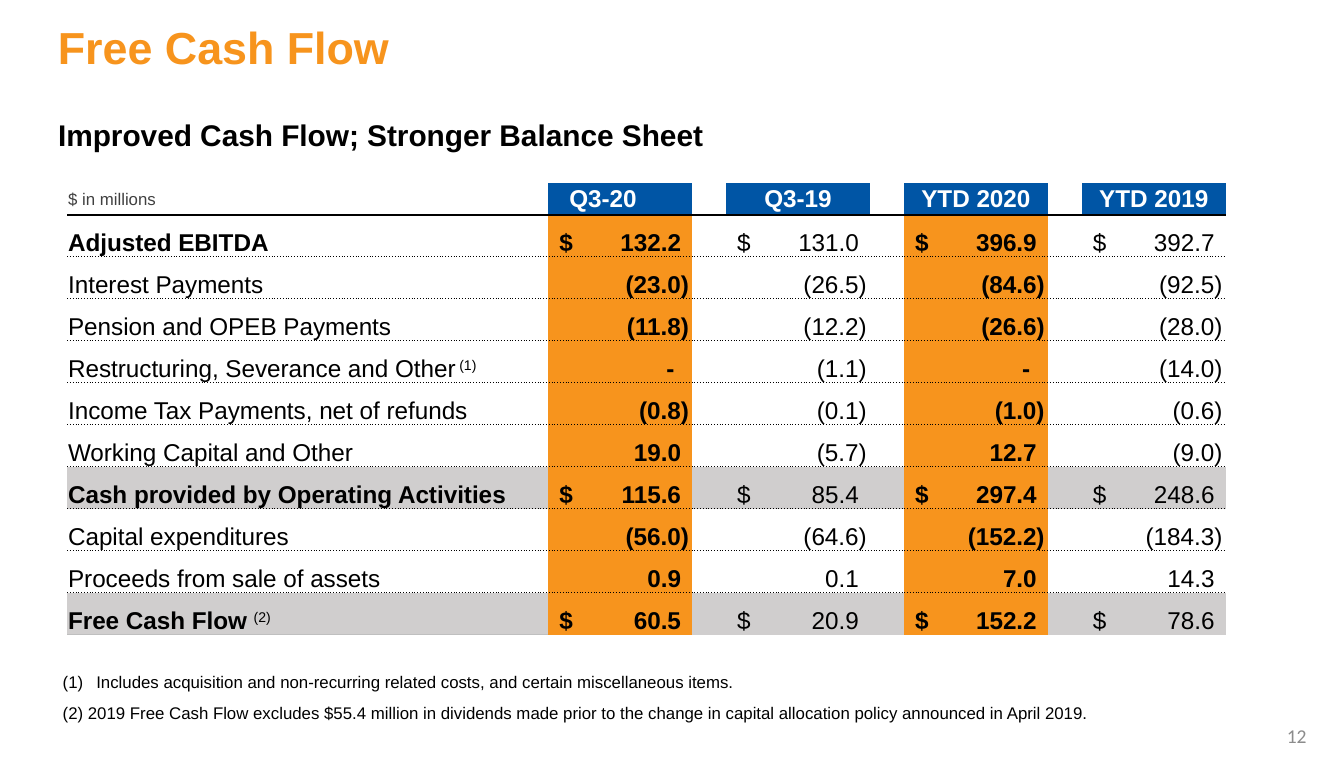
from dataclasses import dataclass

from lxml.etree import SubElement
from pptx import Presentation
from pptx.dml.color import RGBColor
from pptx.enum.text import MSO_ANCHOR, PP_ALIGN
from pptx.oxml import parse_xml
from pptx.oxml.ns import nsdecls, qn
from pptx.util import Pt

# Content
TITLE = "Free Cash Flow"
SUBTITLE = "Improved Cash Flow; Stronger Balance Sheet"
UNIT = "$ in millions"
PERIODS = ["Q3-20", "Q3-19", "YTD 2020", "YTD 2019"]
# label, superscript, values, is a total; "$" rows set the sign apart
ROWS = [
    ("Adjusted EBITDA", "", ["$132.2", "$131.0", "$396.9", "$392.7"], False),
    ("Interest Payments", "", ["(23.0)", "(26.5)", "(84.6)", "(92.5)"], False),
    ("Pension and OPEB Payments", "", ["(11.8)", "(12.2)", "(26.6)", "(28.0)"], False),
    ("Restructuring, Severance and Other", " (1)", ["-", "(1.1)", "-", "(14.0)"], False),
    ("Income Tax Payments, net of refunds", "", ["(0.8)", "(0.1)", "(1.0)", "(0.6)"], False),
    ("Working Capital and Other", "", ["19.0", "(5.7)", "12.7", "(9.0)"], False),
    ("Cash provided by Operating Activities", "", ["$115.6", "$85.4", "$297.4", "$248.6"], True),
    ("Capital expenditures", "", ["(56.0)", "(64.6)", "(152.2)", "(184.3)"], False),
    ("Proceeds from sale of assets", "", ["0.9", "0.1", "7.0", "14.3"], False),
    ("Free Cash Flow ", "(2)", ["$60.5", "$20.9", "$152.2", "$78.6"], True),
]
FOOTNOTES = [
    "Includes acquisition and non-recurring related costs, and certain miscellaneous items.",
    "(2) 2019 Free Cash Flow excludes $55.4 million in dividends made prior to the change "
    "in capital allocation policy announced in April 2019.",
]
PAGE_NUMBER = "12"


@dataclass(frozen=True)
class Theme:
    font: str = "Arial"
    number_font: str = "Calibri"
    orange: str = "F7941D"
    blue: str = "0055A5"
    gray: str = "D0CECE"
    rule_gray: str = "BFBFBF"
    unit_gray: str = "404040"
    number_gray: str = "8C8C8C"
    black: str = "000000"
    white: str = "FFFFFF"
    title: float = 24
    subtitle: float = 16
    body: float = 13
    small: float = 9
    number: float = 10.5


THEME = Theme()

# Geometry in points
SLIDE_WIDTH, SLIDE_HEIGHT = 720, 405.36
TABLE_LEFT, TABLE_TOP = 36, 98
LABEL_WIDTH, VALUE_WIDTH, GAP_WIDTH = 257.7, 77.1, 18.2
HEADER_HEIGHT, ROW_HEIGHT = 17, 22.5
CELL_INSET, SIGN_INSET, DIGIT_INSET = 0.5, 6, 6
PAREN_INSET, DASH_INSET = 1.8, 9.5
PLAIN_STYLE = "{2D5ABB26-0587-4C30-8999-92F81FD0307C}"


def format_runs(paragraph, size, color, bold=False, font=THEME.font):
    for run in paragraph.runs:
        run.font.name, run.font.size, run.font.bold = font, Pt(size), bold
        run.font.color.rgb = RGBColor.from_string(color)


def add_text(slide, box, lines, size, color, bold=False, font=THEME.font,
             inset=(0, 0), anchor=MSO_ANCHOR.TOP, align=PP_ALIGN.LEFT, space_after=0):
    frame = slide.shapes.add_textbox(*map(Pt, box)).text_frame
    frame.word_wrap, frame.vertical_anchor = True, anchor
    frame.margin_left = frame.margin_right = Pt(inset[0])
    frame.margin_top = frame.margin_bottom = Pt(inset[1])
    frame.text = "\n".join(lines)
    for paragraph in frame.paragraphs:
        paragraph.alignment, paragraph.space_after = align, Pt(space_after)
        format_runs(paragraph, size, color, bold, font)
    return frame


def set_rule(cell, side, color, width, dash):
    """Insert a border line; callers add the bottom one first, then the top."""
    cell._tc.get_or_add_tcPr().insert(0, parse_xml(
        f'<a:{side} {nsdecls("a")} w="{int(Pt(width))}"><a:solidFill><a:srgbClr val="{color}"/>'
        f'</a:solidFill><a:prstDash val="{dash}"/></a:{side}>'))


def style_cell(cell, fill, anchor=MSO_ANCHOR.BOTTOM):
    cell.margin_left = cell.margin_right = cell.margin_top = Pt(CELL_INSET)
    cell.margin_bottom = 0
    cell.vertical_anchor = anchor
    if fill:
        cell.fill.solid()
        cell.fill.fore_color.rgb = RGBColor.from_string(fill)
    else:
        cell.fill.background()


def fill_value(cell, value, bold):
    paragraph = cell.text_frame.paragraphs[0]
    if value.startswith("$"):
        cell.margin_left = Pt(SIGN_INSET)
        tabs = SubElement(paragraph._p.get_or_add_pPr(), qn("a:tabLst"))
        stop = VALUE_WIDTH - SIGN_INSET - DIGIT_INSET
        SubElement(tabs, qn("a:tab"), pos=str(int(Pt(stop))), algn="r")
        paragraph.text = "$\t" + value[1:]
    else:
        paragraph.text = value
        paragraph.alignment = PP_ALIGN.RIGHT
        inset = DASH_INSET if value == "-" else DIGIT_INSET
        cell.margin_right = Pt(PAREN_INSET if value.endswith(")") else inset)
    format_runs(paragraph, THEME.body, THEME.black, bold)


def fill_label(cell, label, note, bold):
    paragraph = cell.text_frame.paragraphs[0]
    paragraph.text = label
    if note:
        paragraph.add_run().text = note
    format_runs(paragraph, THEME.body, THEME.black, bold)
    if note:
        paragraph.runs[1].font.bold = False
        paragraph.runs[1]._r.get_or_add_rPr().set("baseline", "30000")


def add_cash_flow_table(slide):
    widths = [LABEL_WIDTH] + [VALUE_WIDTH, GAP_WIDTH] * (len(PERIODS) - 1) + [VALUE_WIDTH]
    heights = [HEADER_HEIGHT] + [ROW_HEIGHT] * len(ROWS)
    frame = slide.shapes.add_table(len(heights), len(widths), Pt(TABLE_LEFT), Pt(TABLE_TOP),
                                   Pt(sum(widths)), Pt(sum(heights)))
    table = frame.table
    table.first_row = table.horz_banding = False
    table._tbl.tblPr.find(qn("a:tableStyleId")).text = PLAIN_STYLE
    for column, width in zip(table.columns, widths):
        column.width = Pt(width)
    for row, height in zip(table.rows, heights):
        row.height = Pt(height)

    # Header
    for index in range(len(widths)):
        cell = table.cell(0, index)
        style_cell(cell, THEME.blue if index % 2 else None, MSO_ANCHOR.MIDDLE)
        paragraph = cell.text_frame.paragraphs[0]
        if index == 0:
            paragraph.text = UNIT
            format_runs(paragraph, THEME.small, THEME.unit_gray)
        elif index % 2:
            paragraph.text = PERIODS[index // 2]
            paragraph.alignment = PP_ALIGN.CENTER
            format_runs(paragraph, THEME.body, THEME.white, True)
    table.cell(0, 1).margin_right = Pt(19)

    # Body: current periods are bold on orange, totals are gray
    for row_index, (label, note, values, is_total) in enumerate(ROWS, 1):
        for index in range(len(widths)):
            cell = table.cell(row_index, index)
            is_current = index % 4 == 1
            style_cell(cell, THEME.orange if is_current else THEME.gray if is_total else None)
            if index == 0:
                fill_label(cell, label, note, is_total or row_index == 1)
            elif index % 2:
                fill_value(cell, values[index // 2], is_current)

    # Rules and the type size of empty cells
    last = len(ROWS)
    solid, dotted = (THEME.black, 1, "solid"), (THEME.black, 0.5, "sysDot")
    for row_index in range(last + 1):
        for index in range(len(widths)):
            cell = table.cell(row_index, index)
            if row_index < last:
                set_rule(cell, "lnB", *(dotted if row_index else solid))
            elif index == 0:
                set_rule(cell, "lnB", THEME.rule_gray, 0.5, "solid")
            if row_index:
                set_rule(cell, "lnT", *(solid if row_index == 1 else dotted))
            if not cell.text_frame.text:
                SubElement(cell.text_frame.paragraphs[0]._p, qn("a:endParaRPr"),
                           sz=str(int(THEME.small * 100)))


def main():
    presentation = Presentation()
    presentation.slide_width, presentation.slide_height = Pt(SLIDE_WIDTH), Pt(SLIDE_HEIGHT)
    slide = presentation.slides.add_slide(presentation.slide_layouts[6])

    # Headings
    add_text(slide, (31, 7.2, 658, 36), [TITLE], THEME.title, THEME.orange, True,
             anchor=MSO_ANCHOR.MIDDLE)
    add_text(slide, (24, 59, 480, 26.6), [SUBTITLE], THEME.subtitle, THEME.black, True,
             inset=(7.2, 3.6))

    add_cash_flow_table(slide)

    # Footnotes: the first is numbered automatically
    notes = add_text(slide, (33.6, 359.6, 658, 44.6), FOOTNOTES, THEME.small, THEME.black,
                     space_after=6)
    properties = notes.paragraphs[0]._p.get_or_add_pPr()
    properties.set("marL", str(int(Pt(18))))
    properties.set("indent", str(int(Pt(-18))))
    SubElement(properties, qn("a:buFont"), typeface=THEME.font)
    SubElement(properties, qn("a:buAutoNum"), type="arabicParenBoth")

    # Page number
    add_text(slide, (545, 383.4, 162, 21.6), [PAGE_NUMBER], THEME.number, THEME.number_gray,
             font=THEME.number_font, inset=(7.2, 3.6), anchor=MSO_ANCHOR.MIDDLE,
             align=PP_ALIGN.RIGHT)
    presentation.save("out.pptx")


if __name__ == "__main__":
    main()
